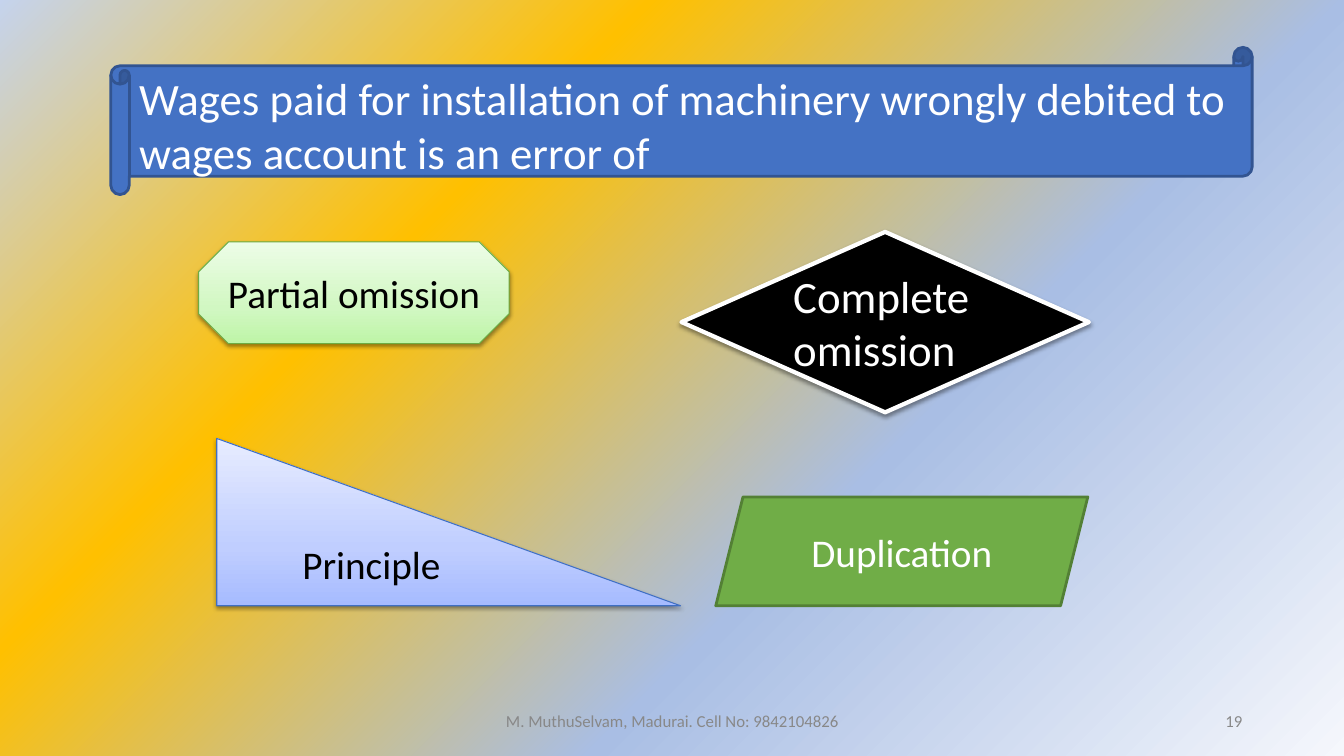
from pptx import Presentation
from pptx.dml.color import RGBColor
from pptx.enum.shapes import MSO_SHAPE as Shape
from pptx.enum.text import MSO_ANCHOR as Anchor, PP_ALIGN as Align
from pptx.oxml import parse_xml
from pptx.oxml.ns import nsdecls, qn
from pptx.util import Inches, Pt

WIDTH, HEIGHT = Inches(13.33), Inches(7.5)
FONT = "Calibri"

# Boxes are left, top, width and height in percent of the slide's size.
BACKGROUND = [(0, "F5F7FC"), (36, "A9BEE4"), (69, "FFC000"), (100, "C5D3ED")]
GREEN = [(0, "BEF5A7"), (35, "D1F7C2"), (100, "EDFDE7")]
BLUE = [(0, "A6BBFF"), (35, "C0CEFF"), (100, "E7ECFF")]
UPWARD = '<a:lin ang="16200000" scaled="0"/>'
FROM_CORNER = '<a:path path="circle"><a:fillToRect l="100000" t="100000"/></a:path>'

QUESTION = "Wages paid for installation of machinery wrongly debited to wages account is an error of"
QUESTION_BOX = (9.6, 9.2, 82.25, 14.53)
SCROLL = dict(kind=Shape.HORIZONTAL_SCROLL, box=(8.25, 6.27, 84.92, 19.47),
              fill="4472C4", line=("325491", 2))
ANSWERS = [
    dict(text="Partial omission", kind=Shape.OCTAGON, box=(14.78, 32, 23.1, 13.47),
         fill=GREEN, line=("6DAC43", 0.75), shadow=True,
         size=28, color="000000", align=Align.CENTER),
    dict(text="Complete omission", kind=Shape.DIAMOND, box=(50.71, 30.67, 30.31, 23.87),
         fill="000000", line=("FFFFFF", 3), shadow=True,
         size=32, color="FFFFFF", align=Align.LEFT),
    dict(text="Principle", kind=Shape.RIGHT_TRIANGLE, box=(16.13, 58, 34.51, 22.13),
         fill=BLUE, line=("3F6FC3", 0.75), shadow=True,
         size=28, color="000000", align=Align.CENTER),
    dict(text="Duplication", kind=Shape.PARALLELOGRAM, box=(53.26, 65.73, 27.68, 14.4),
         fill="70AD47", line=("538035", 2), shadow=False,
         size=28, color="FFFFFF", align=Align.CENTER),
]
FOOTERS = [
    ("M. MuthuSelvam, Madurai. Cell No: 9842104826", (33.16, 92.67, 33.76, 5.33), Align.CENTER),
    ("19", (70.67, 92.67, 22.5, 5.33), Align.RIGHT),
]


def rgb(color):
    return RGBColor.from_string(color)


def place(box):
    return [round(share * length / 100)
            for share, length in zip(box, (WIDTH, HEIGHT, WIDTH, HEIGHT))]


def set_gradient(fill, owner, stops, direction):
    """Give the fill inside the owner element these colour stops."""
    fill.gradient()
    current = next(owner.iter(qn("a:gradFill")))
    stop_xml = "".join(
        f'<a:gs pos="{position * 1000}"><a:srgbClr val="{color}"/></a:gs>'
        for position, color in stops)
    gradient = parse_xml(f'<a:gradFill {nsdecls("a")} rotWithShape="1">'
                         f'<a:gsLst>{stop_xml}</a:gsLst>{direction}</a:gradFill>')
    current.getparent().replace(current, gradient)


def add_soft_shadow(shape):
    effects = shape.element.spPr.find(qn("a:effectLst"))
    effects.append(parse_xml(
        f'<a:outerShdw {nsdecls("a")} blurRad="40000" dist="20000" dir="5400000" '
        'rotWithShape="0"><a:srgbClr val="000000"><a:alpha val="38000"/>'
        '</a:srgbClr></a:outerShdw>'))


def write(shape, text, size, color, align, **frame_format):
    frame = shape.text_frame
    frame_format = dict(word_wrap=True, vertical_anchor=Anchor.MIDDLE) | frame_format
    for name, value in frame_format.items():
        setattr(frame, name, value)
    paragraph = frame.paragraphs[0]
    paragraph.alignment = align
    paragraph.line_spacing = 1.0
    run = paragraph.add_run()
    run.text = text
    for name, value in dict(name=FONT, size=Pt(size)).items():
        setattr(run.font, name, value)
    run.font.color.rgb = rgb(color)


def add_figure(slide, kind, box, fill, line, shadow=False):
    shape = slide.shapes.add_shape(kind, *place(box))
    shape.shadow.inherit = False
    if isinstance(fill, str):
        shape.fill.solid()
        shape.fill.fore_color.rgb = rgb(fill)
    else:
        set_gradient(shape.fill, shape.element, fill, UPWARD)
    line_color, line_width = line
    shape.line.color.rgb = rgb(line_color)
    shape.line.width = Pt(line_width)
    if shadow:
        add_soft_shadow(shape)
    return shape


def add_question(slide):
    scroll = add_figure(slide, **SCROLL)
    title = slide.shapes.title
    scroll.element.addnext(title.element)
    for name, value in zip(("left", "top", "width", "height"), place(QUESTION_BOX)):
        setattr(title, name, value)
    write(title, QUESTION, 32, "FFFFFF", Align.LEFT,
          margin_right=0, margin_top=0, margin_bottom=0)


def main():
    presentation = Presentation()
    presentation.slide_width, presentation.slide_height = WIDTH, HEIGHT
    slide = presentation.slides.add_slide(presentation.slide_layouts[5])
    set_gradient(slide.background.fill, slide.element, BACKGROUND, FROM_CORNER)
    add_question(slide)
    for answer in ANSWERS:
        figure = {key: answer[key] for key in ("kind", "box", "fill", "line", "shadow")}
        wording = {key: answer[key] for key in ("text", "size", "color", "align")}
        write(add_figure(slide, **figure), **wording)
    for text, box, align in FOOTERS:
        write(slide.shapes.add_textbox(*place(box)), text, 12, "888888", align)
    presentation.save("out.pptx")


if __name__ == "__main__":
    main()
